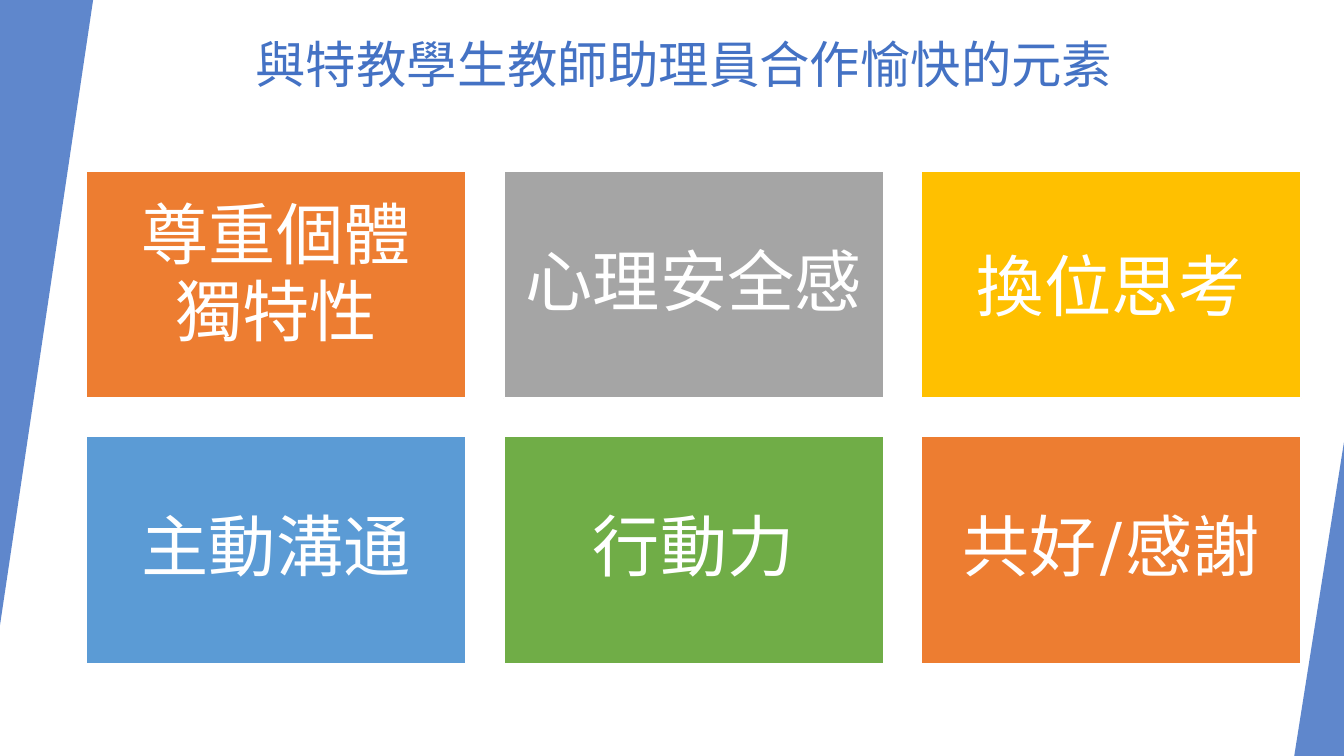
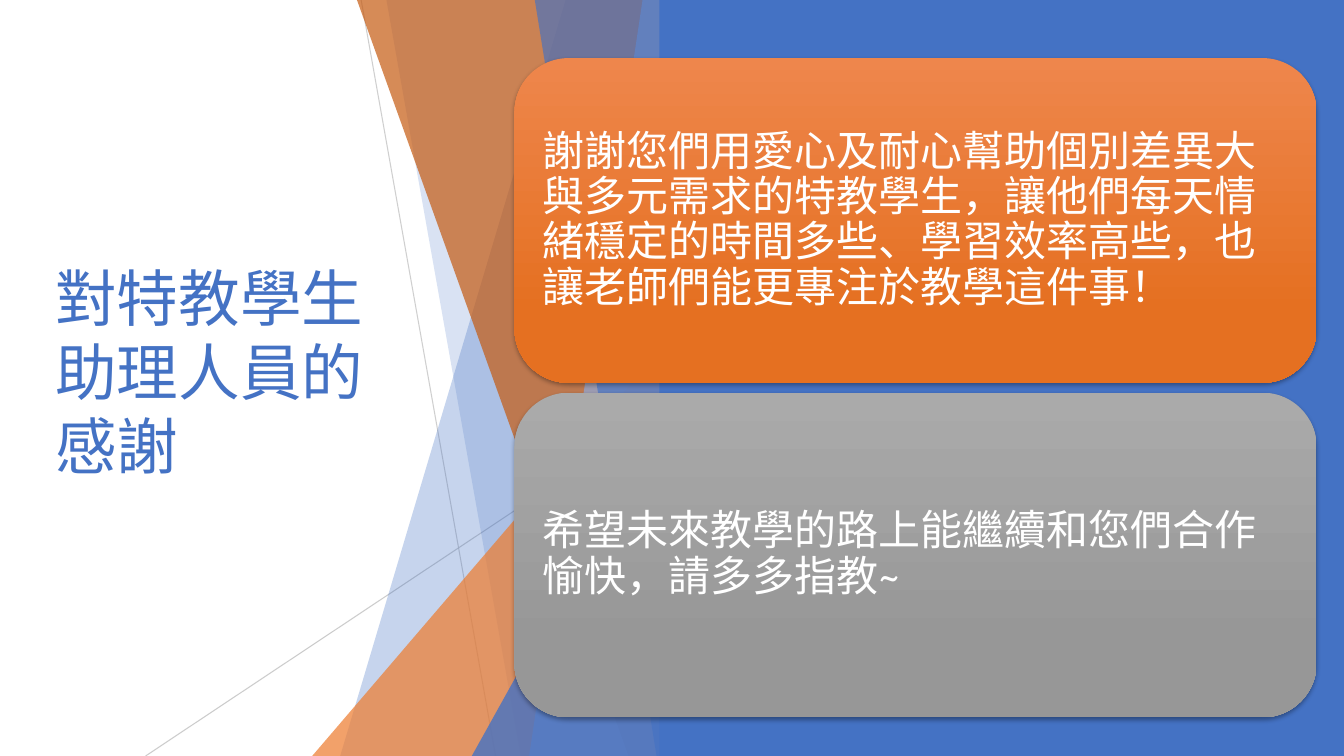
"""Builds two slides: elements of good cooperation, and a thank-you."""
from lxml.etree import SubElement
from pptx import Presentation
from pptx.dml.color import RGBColor
from pptx.enum.shapes import MSO_CONNECTOR, MSO_SHAPE
from pptx.enum.text import MSO_ANCHOR, PP_ALIGN
from pptx.oxml.ns import qn
from pptx.util import Pt

FONT = "Karla"
WHITE = RGBColor(0xFF, 0xFF, 0xFF)
BLUE = RGBColor(0x44, 0x72, 0xC4)
PALE_BLUE = RGBColor(0x8F, 0xAA, 0xDC)
SKY = RGBColor(0x5B, 0x9B, 0xD5)
ORANGE = RGBColor(0xED, 0x7D, 0x31)
RUST = RGBColor(0xC5, 0x5A, 0x11)
GRAY = RGBColor(0xA5, 0xA5, 0xA5)
LINE_GRAY = RGBColor(0xBF, 0xBF, 0xBF)
GOLD = RGBColor(0xFF, 0xC0, 0x00)
GREEN = RGBColor(0x70, 0xAD, 0x47)
ORANGE_TOP = RGBColor(0xEE, 0x86, 0x4C)
ORANGE_BOTTOM = RGBColor(0xE5, 0x70, 0x21)
GRAY_TOP = RGBColor(0xAA, 0xAA, 0xAA)
GRAY_BOTTOM = RGBColor(0x97, 0x97, 0x97)
WIDTH, HEIGHT = 960, 540


def paint(sp, color, opacity=100):
    """Fill a shape plainly, without outline or shadow."""
    sp.shadow.inherit = False
    sp.line.fill.background()
    sp.fill.solid()
    sp.fill.fore_color.rgb = color
    if opacity < 100:
        clr = sp.fill._xPr.find(".//" + qn("a:srgbClr"))
        SubElement(clr, qn("a:alpha"), val=str(opacity * 1000))


def write(sp, text, size, color, align=PP_ALIGN.LEFT, anchor=MSO_ANCHOR.MIDDLE,
          inset=None, spacing=None, after=0):
    """Set and format the text of a shape."""
    tf = sp.text_frame
    tf.word_wrap = True
    tf.vertical_anchor = anchor
    if inset is not None:
        tf.margin_left = tf.margin_right = tf.margin_top = tf.margin_bottom = Pt(inset)
    tf.text = text
    for p in tf.paragraphs:
        p.alignment = align
        p.line_spacing = spacing
        p.space_after = Pt(after)
        for r in p.runs:
            r.font.size = Pt(size)
            r.font.name = FONT
            r.font.color.rgb = color
            SubElement(r.font._element, qn("a:ea"), typeface=FONT)


prs = Presentation()
prs.slide_width, prs.slide_height = Pt(WIDTH), Pt(HEIGHT)
titles = [
    ("與特教學生教師助理員合作愉快的元素", 36, MSO_ANCHOR.TOP, (175.5, 20, 642, 63)),
    ("對特教學生\v助理人員的\v感謝", 44, MSO_ANCHOR.MIDDLE, (32.5, 103.5, 279.5, 322.5)),
]
for text, size, anchor, box in titles:
    s = prs.slides.add_slide(prs.slide_layouts[6])
    sp = s.shapes.add_textbox(*[Pt(v) for v in box])
    write(sp, text, size, BLUE, anchor=anchor)
elements, thanks = prs.slides

for x, y, w, h, turn in [(0, 0, 66.5, 446.5, 180), (924.5, 316, 35.5, 224, 0)]:
    sp = elements.shapes.add_shape(MSO_SHAPE.ISOSCELES_TRIANGLE, Pt(x), Pt(y), Pt(w), Pt(h))
    sp.adjustments[0] = 1
    sp.rotation = turn
    paint(sp, BLUE, 85)

tiles = [
    ("尊重個體\n獨特性", ORANGE, Pt(38), 16.8),
    ("心理安全感", GRAY, 0.9, 16.8),
    ("換位思考", GOLD, None, 0),
    ("主動溝通", SKY, 0.9, 16.8),
    ("行動力", GREEN, 0.9, 16.8),
    ("共好/感謝", ORANGE, 0.9, 16.8),
]
for i, (text, color, spacing, after) in enumerate(tiles):
    row, col = divmod(i, 3)
    sp = elements.shapes.add_shape(MSO_SHAPE.RECTANGLE, Pt(61.5 + col * 298.25),
                                   Pt(122 + row * 189.5), Pt(271.5), Pt(162.5))
    paint(sp, color)
    sp.line.color.rgb = WHITE
    sp.line.width = Pt(1.5)
    write(sp, text, 48, WHITE, PP_ALIGN.CENTER, inset=14.4, spacing=spacing, after=after)

for x1, y1, x2, y2, opacity in [(258, 0, 354, HEIGHT, 75), (480, 290, 104, HEIGHT, 80)]:
    sp = thanks.shapes.add_connector(MSO_CONNECTOR.STRAIGHT, Pt(x1), Pt(y1), Pt(x2), Pt(y2))
    sp.line.color.rgb = LINE_GRAY
    sp.line.width = Pt(0.75)
    clr = sp.line._ln.find(".//" + qn("a:srgbClr"))
    SubElement(clr, qn("a:alpha"), val=str(opacity * 1000))
    SubElement(sp._element.spPr, qn("a:effectLst"))

BAND_RIGHT = 480
facets = [
    ("band", 404, 243, BLUE, 30),
    ("band", 276, 372, BLUE, 20),
    ("triangle", 223, 240, ORANGE, 72),
    ("band", 255, 449, RUST, 70),
    ("band", 459, 378, PALE_BLUE, 70),
    ("band", 382, 469, BLUE, 65),
    ("triangle", 337, 283, BLUE, 80),
]
for kind, a, b, color, opacity in facets:
    if kind == "band":
        fb = thanks.shapes.build_freeform(Pt(a), 0)
        fb.add_line_segments([(Pt(x), Pt(y)) for x, y in
                              [(BAND_RIGHT, 0), (BAND_RIGHT, HEIGHT), (b, HEIGHT)]])
        sp = fb.convert_to_shape()
    else:
        sp = thanks.shapes.add_shape(MSO_SHAPE.ISOSCELES_TRIANGLE, Pt(a), Pt(b),
                                     Pt(BAND_RIGHT - a), Pt(HEIGHT - b))
        sp.adjustments[0] = 1
    paint(sp, color, opacity)

sp = thanks.shapes.add_shape(MSO_SHAPE.RECTANGLE, Pt(471), 0, Pt(WIDTH - 471), Pt(HEIGHT))
paint(sp, BLUE)

cards = [
    ("謝謝您們用愛心及耐心幫助個別差異大與多元需求的特教學生，讓他們每天情緒穩定的時間多些、"
     "學習效率高些，也讓老師們能更專注於教學這件事！", ORANGE_TOP, ORANGE_BOTTOM),
    ("希望未來教學的路上能繼續和您們合作愉快，請多多指教~", GRAY_TOP, GRAY_BOTTOM),
]
for i, (text, top, bottom) in enumerate(cards):
    sp = thanks.shapes.add_shape(MSO_SHAPE.ROUNDED_RECTANGLE, Pt(367.5), Pt(41.5 + i * 239),
                                 Pt(573), Pt(232))
    paint(sp, top)
    sp.fill.gradient()
    sp.fill.gradient_angle = 270
    for stop, color, position in zip(sp.fill.gradient_stops, (top, bottom), (0, 0.78)):
        stop.color.rgb = color
        stop.position = position
    effects = sp._element.spPr.find(qn("a:effectLst"))
    shadow = SubElement(effects, qn("a:outerShdw"), blurRad=str(Pt(3)), dist=str(Pt(2)),
                        dir="5400000", rotWithShape="0")
    clr = SubElement(shadow, qn("a:srgbClr"), val="000000")
    SubElement(clr, qn("a:alpha"), val="35000")
    write(sp, text, 30, WHITE, inset=8.64, spacing=0.9, after=10.5)

prs.save("out.pptx")
